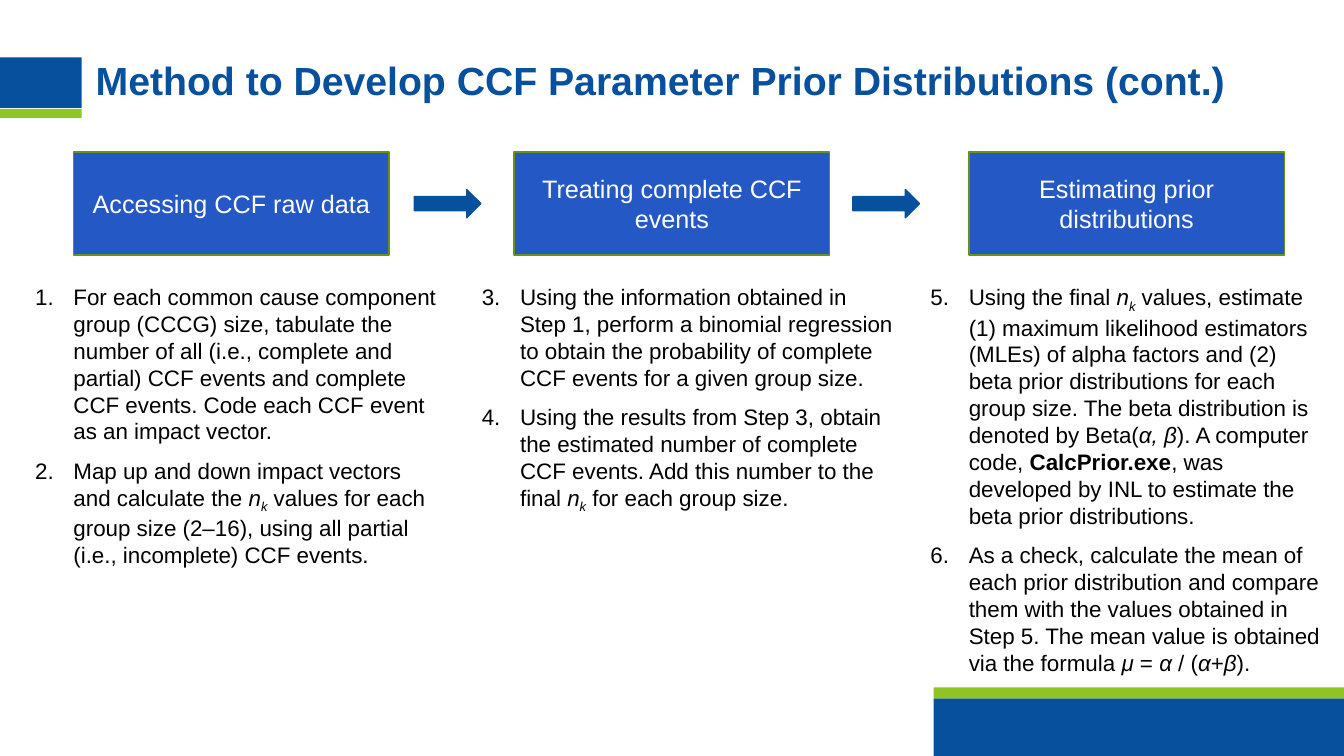
"""Build the slide on developing CCF parameter prior distributions."""
from typing import Any, NamedTuple

from lxml import etree
from pptx import Presentation
from pptx import util as u
from pptx.dml import color
from pptx.enum import shapes, text
from pptx.oxml import ns

PX = 9144
COLORS = {"blue": "06509D", "green": "8EC423", "box": "2458C5",
          "border": "69911A", "white": "FFFFFF", "black": "000000"}
RECTANGLE = shapes.MSO_SHAPE.RECTANGLE
ARROW = shapes.MSO_SHAPE.RIGHT_ARROW


class Area(NamedTuple):
    left: int
    top: int
    width: int
    height: int


class Block(NamedTuple):
    area: Area
    fill: str
    line: str = ""
    kind: Any = RECTANGLE


class Run(NamedTuple):
    text: str
    format: dict[str, bool] = {}
    baseline: int = 0


class Column(NamedTuple):
    heading: str
    heading_left: int
    body: Area
    start: int
    steps: list[list[Run]]
    fill: str = ""


ITALIC = {"italic": True}
N_K = [Run("n", ITALIC), Run("k", ITALIC, -25000)]

BLOCKS = [
    Block(Area(926, 693, 408, 57), "blue"),
    Block(Area(926, 682, 408, 11), "green"),
    Block(Area(0, 57, 81, 50), "blue"),
    Block(Area(0, 108, 81, 9), "green"),
]
ARROWS = [Block(Area(left, 188, 66, 28), "blue", "blue", ARROW) for left in (411, 846)]

COLUMNS = [
    Column("Accessing CCF raw data", 73, Area(25, 276, 419, 292), 1, [
        [Run("For each common cause component group (CCCG) size, tabulate the number "
             "of all (i.e., complete and partial) CCF events and complete CCF events. "
             "Code each CCF event as an impact vector.")],
        [Run("Map up and down impact vectors and calculate the "), *N_K,
         Run(" values for each group size (2–16), using all partial "
             "(i.e., incomplete) CCF events.")],
    ]),
    Column("Treating complete CCF events", 510, Area(468, 276, 428, 265), 3, [
        [Run("Using the information obtained in Step 1, perform a binomial regression "
             "to obtain the probability of complete CCF events for a given group size.")],
        [Run("Using the results from Step 3, obtain the estimated number of complete "
             "CCF events. Add this number to the final "), *N_K,
         Run(" for each group size.")],
    ]),
    Column("Estimating prior distributions", 961, Area(913, 276, 411, 400), 5, [
        [Run("Using the final "), *N_K,
         Run(" values, estimate (1) maximum likelihood estimators (MLEs) of alpha "
             "factors and (2) beta prior distributions for each group size. The beta "
             "distribution is denoted by Beta("), Run("α, β", ITALIC),
         Run("). A computer code, "), Run("CalcPrior.exe", {"bold": True}),
         Run(", was developed by INL to estimate the beta prior distributions.")],
        [Run("As a check, calculate the mean of each prior distribution and compare "
             "them with the values obtained in Step 5. The mean value is obtained via "
             "the formula "), Run("μ", ITALIC), Run(" = "), Run("α", ITALIC),
         Run(" / ("), Run("α", ITALIC), Run("+"), Run("β", ITALIC), Run(").")],
    ], "white"),
]


def rgb(name: str) -> color.RGBColor:
    return color.RGBColor.from_string(COLORS[name])


def emu(area: Area) -> list[int]:
    return [value * PX for value in area]


def set_values(target: Any, values: dict[str, Any]) -> None:
    for name, value in values.items():
        setattr(target, name, value)


def paint(shape: Any, fill: str) -> None:
    shape.fill.solid()
    shape.fill.fore_color.rgb = rgb(fill)


def add_block(slide: Any, block: Block) -> Any:
    shape = slide.shapes.add_shape(block.kind, *emu(block.area))
    shape.shadow.inherit = False
    paint(shape, block.fill)
    if block.line:
        shape.line.color.rgb = rgb(block.line)
        shape.line.width = u.Pt(1)
    else:
        shape.line.fill.background()
    return shape


def add_run(paragraph: Any, content: Run, size: int, ink: str) -> None:
    run = paragraph.add_run()
    run.text = content.text
    set_values(run.font, {"name": "Arial", "size": u.Pt(size), **content.format})
    run.font.color.rgb = rgb(ink)
    if content.baseline:
        run.font._element.set("baseline", str(content.baseline))


def number(paragraph: Any, start: int) -> None:
    properties = paragraph._p.get_or_add_pPr()
    set_values(paragraph, {"space_after": u.Pt(6)})
    for name, value in {"marL": 38 * PX, "indent": -38 * PX}.items():
        properties.set(name, str(value))
    etree.SubElement(properties, ns.qn("a:buFont"), typeface="+mj-lt")
    etree.SubElement(properties, ns.qn("a:buAutoNum"), type="arabicPeriod", startAt=str(start))


def add_title(slide: Any, title: str) -> None:
    frame = slide.shapes.add_textbox(*emu(Area(95, 61, 1157, 54))).text_frame
    set_values(frame, {"word_wrap": True, "margin_left": 0, "margin_top": 0})
    frame.paragraphs[0].line_spacing = 0.9
    add_run(frame.paragraphs[0], Run(title, {"bold": True}), 28, "blue")


def add_column(slide: Any, column: Column) -> None:
    heading = add_block(slide, Block(Area(column.heading_left, 151, 313, 102), "box", "border"))
    set_values(heading.text_frame, {"word_wrap": True, "vertical_anchor": text.MSO_ANCHOR.MIDDLE})
    paragraph = heading.text_frame.paragraphs[0]
    paragraph.alignment = text.PP_ALIGN.CENTER
    add_run(paragraph, Run(column.heading), 18, "white")

    body = slide.shapes.add_textbox(*emu(column.body))
    if column.fill:
        paint(body, column.fill)
    frame = body.text_frame
    set_values(frame, {"word_wrap": True, "auto_size": text.MSO_AUTO_SIZE.SHAPE_TO_FIT_TEXT})
    for index, step in enumerate(column.steps):
        paragraph = frame.add_paragraph() if index else frame.paragraphs[0]
        paragraph.space_before = u.Pt(3 if index else 0)
        number(paragraph, column.start)
        for content in step:
            add_run(paragraph, content, 16, "black")


def main() -> None:
    presentation = Presentation()
    set_values(presentation, {"slide_width": 1333 * PX, "slide_height": 750 * PX})
    slide = presentation.slides.add_slide(presentation.slide_layouts[6])
    for block in BLOCKS:
        add_block(slide, block)
    add_title(slide, "Method to Develop CCF Parameter Prior Distributions (cont.)")
    for column in COLUMNS:
        add_column(slide, column)
    for arrow in ARROWS:
        add_block(slide, arrow)
    presentation.save("out.pptx")


if __name__ == "__main__":
    main()
